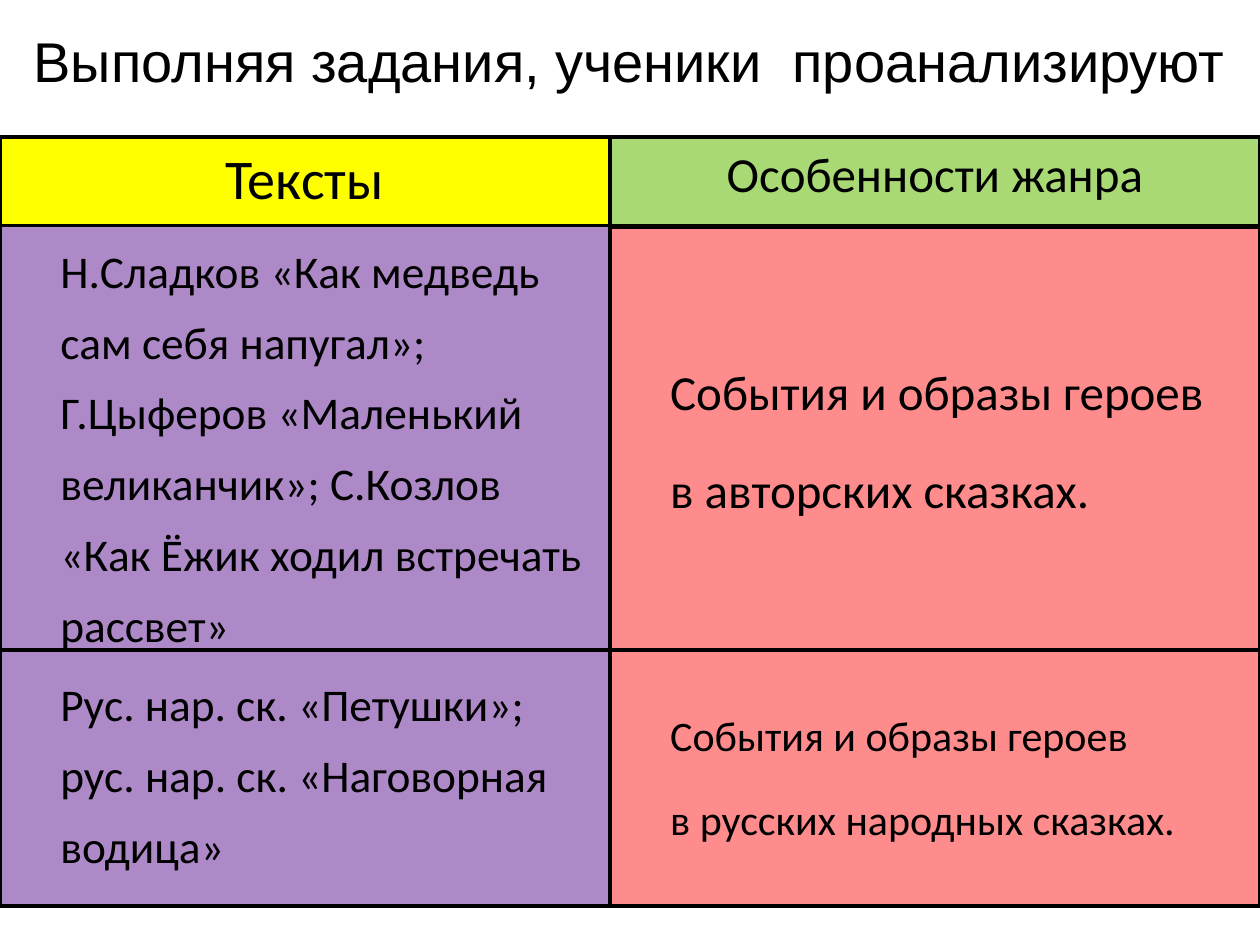
from lxml import etree
from pptx import Presentation
from pptx import util as u
from pptx.dml.color import RGBColor
from pptx.enum import shapes, text
from pptx.oxml.ns import qn

COLORS = {"ink": "000000", "yellow": "FFFF00", "green": "92D050",
          "purple": "7030A0", "red": "FF0000"}
WIDTH, HEIGHT = 720, 540
HEADER_TOP, HEADER_HEIGHT = 78.5, 50.4
BODY_BOTTOM, DIVIDER_TOP = 517.7, 371.5
COLUMN_SPLIT = 348.5
INDENT = 27.4

TITLE = "Выполняя задания, ученики  проанализируют"
HEADERS = [
    {"text": "Тексты", "size": 32, "fill": "yellow", "opacity": 100},
    {"text": "Особенности жанра", "size": 28, "fill": "green", "opacity": 79},
]
BODIES = [
    {"fill": "purple", "opacity": 57, "line": 2.5, "top": 126, "inset": 3.6, "spacing": 1.3,
     "paragraphs": [
         ("Н.Сладков «Как медведь сам себя напугал»; Г.Цыферов «Маленький "
          "великанчик»; С.Козлов «Как Ёжик ходил встречать рассвет»", 25.9, 0),
         ("Рус. нар. ск. «Петушки»; рус. нар. ск. «Наговорная водица»", 25.9, 5.2)]},
    {"fill": "red", "opacity": 45, "line": 2.25, "top": 129.6, "inset": 60, "spacing": 1.5,
     "paragraphs": [
         ("События и образы героев", 28, 0),
         ("в авторских сказках.", 28, 5.6),
         ("События и образы героев", 24, 95),
         ("в русских народных сказках.", 24, 4.8)]},
]
COLUMNS = [(0, COLUMN_SPLIT), (COLUMN_SPLIT, WIDTH - COLUMN_SPLIT)]


def add_panel(slide, left, top, width, height, line, fill=None, opacity=100):
    shape = slide.shapes.add_shape(shapes.MSO_SHAPE.RECTANGLE,
                                   u.Pt(left), u.Pt(top), u.Pt(width), u.Pt(height))
    shape.shadow.inherit = False
    shape.line.color.rgb = RGBColor.from_string(COLORS["ink"])
    shape.line.width = u.Pt(line)
    if fill is None:
        shape.fill.background()
        return shape
    shape.fill.solid()
    shape.fill.fore_color.rgb = RGBColor.from_string(COLORS[fill])
    if opacity < 100:
        color = shape.element.spPr.find(qn("a:solidFill"))[0]
        etree.SubElement(color, qn("a:alpha")).set("val", str(opacity * 1000))
    return shape


def write(shape, paragraphs, font="Calibri", align=text.PP_ALIGN.CENTER,
          inset=3.6, spacing=1.0, indent=0):
    frame = shape.text_frame
    frame.word_wrap = True
    frame.vertical_anchor = text.MSO_ANCHOR.TOP
    frame.margin_top = u.Pt(inset)
    for index, (words, size, before) in enumerate(paragraphs):
        paragraph = frame.add_paragraph() if index else frame.paragraphs[0]
        paragraph.text = words
        paragraph.alignment = align
        paragraph.line_spacing = spacing
        paragraph.space_before = u.Pt(before)
        if indent:
            properties = paragraph._p.get_or_add_pPr()
            properties.set("marL", str(u.Pt(indent)))
            properties.set("indent", "0")
        paragraph.font.name = font
        paragraph.font.size = u.Pt(size)
        paragraph.font.color.rgb = RGBColor.from_string(COLORS["ink"])


def main():
    presentation = Presentation()
    presentation.slide_width, presentation.slide_height = u.Pt(WIDTH), u.Pt(HEIGHT)
    slide = presentation.slides.add_slide(presentation.slide_layouts[6])

    for (left, width), body in zip(COLUMNS, BODIES):
        panel = add_panel(slide, left, body["top"], width, BODY_BOTTOM - body["top"],
                          body["line"], body["fill"], body["opacity"])
        write(panel, body["paragraphs"], align=text.PP_ALIGN.LEFT,
              inset=body["inset"], spacing=body["spacing"], indent=INDENT)

    for (left, width), header in zip(COLUMNS, HEADERS):
        panel = add_panel(slide, left, HEADER_TOP, width, HEADER_HEIGHT,
                          2.25, header["fill"], header["opacity"])
        write(panel, [(header["text"], header["size"], 0)])

    title = slide.shapes.add_textbox(u.Pt(0), u.Pt(11.5), u.Pt(WIDTH), u.Pt(46))
    write(title, [(TITLE, 32, 0)], font="Arial")
    title.text_frame.auto_size = text.MSO_AUTO_SIZE.SHAPE_TO_FIT_TEXT

    add_panel(slide, 0, DIVIDER_TOP, WIDTH, BODY_BOTTOM - DIVIDER_TOP, 2)
    presentation.save("out.pptx")


if __name__ == "__main__":
    main()
